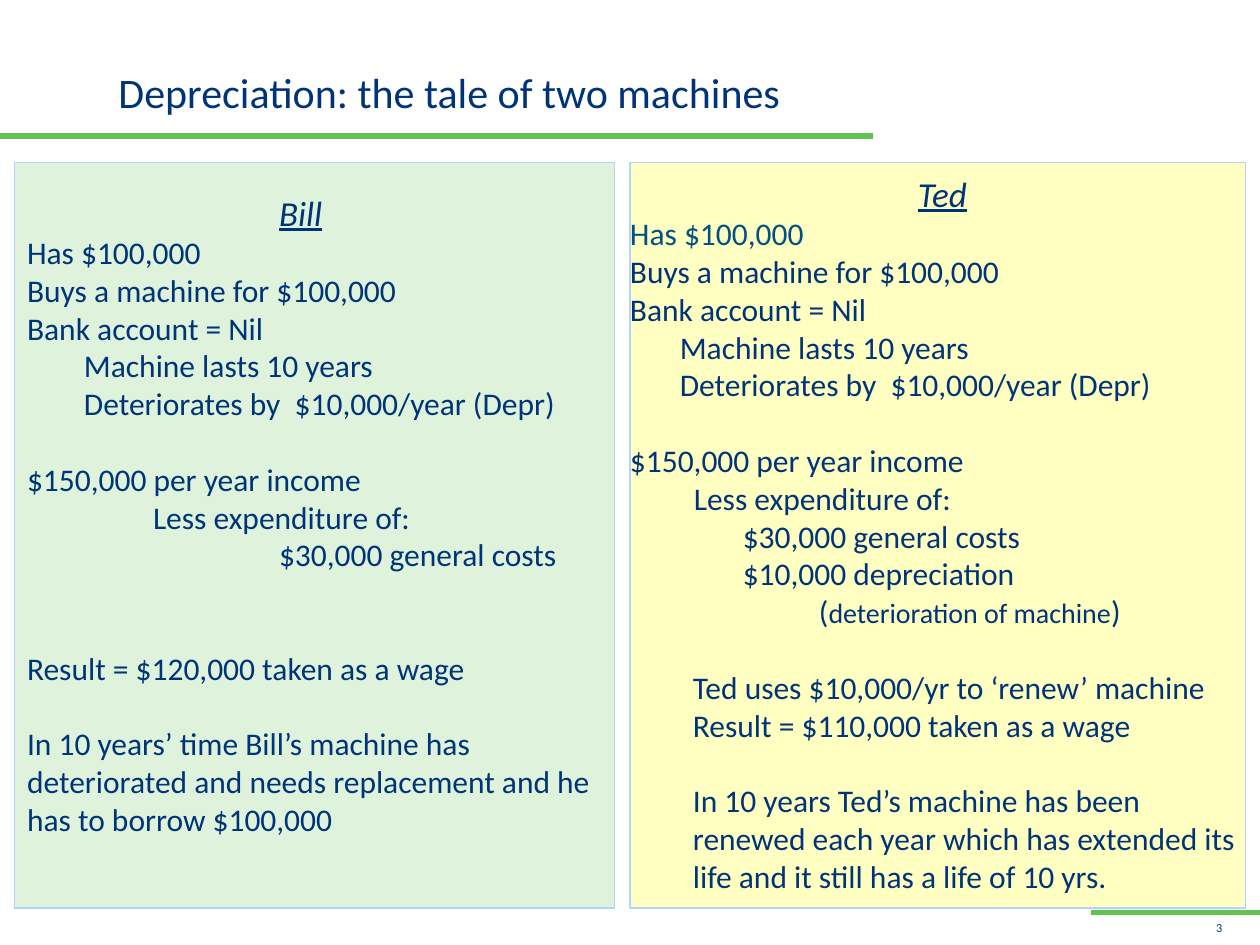
import pptx
import pptx.util
import pptx.dml.color
import pptx.enum.shapes
import pptx.enum.text
import pptx.oxml.ns
import lxml.etree

Pt = pptx.util.Pt
RGBColor = pptx.dml.color.RGBColor
Align = pptx.enum.text.PP_ALIGN
Anchor = pptx.enum.text.MSO_ANCHOR

NAVY = RGBColor(0x00, 0x34, 0x78)
TEAL = RGBColor(0x00, 0x52, 0x84)
GREEN = RGBColor(0x61, 0xC2, 0x50)
PALE_GREEN = RGBColor(0xDF, 0xF3, 0xDC)
PALE_YELLOW = RGBColor(0xFF, 0xFF, 0xC2)
PALE_BLUE = RGBColor(0xB1, 0xD3, 0xFF)
LINE = 21.6
HEADING = dict(size=20, italic=True, underline=True)

BILL = [
    dict(text="Bill", indent=144, height=24, font=HEADING),
    dict(text="Has $100,000"),
    dict(text="Buys a machine for $100,000"),
    dict(text="Bank account = Nil"),
    dict(text="Machine lasts 10 years", indent=32.5),
    dict(text="Deteriorates by  $10,000/year (Depr)", indent=32.5),
    dict(text="$150,000 per year income", gap=1),
    dict(text="Less expenditure of:", indent=72),
    dict(text="$30,000 general costs", indent=144),
    dict(text="Result = $120,000 taken as a wage", gap=2),
    dict(text="In 10 years’ time Bill’s machine has deteriorated and needs "
              "replacement and he has to borrow $100,000", gap=1),
]
TED = [
    dict(text="Ted", indent=5.5, height=24, align=Align.CENTER, font=HEADING),
    dict(text="Has $100,000", font=dict(color=TEAL)),
    dict(text="Buys a machine for $100,000"),
    dict(text="Bank account = Nil"),
    dict(text="Machine lasts 10 years", indent=28.5),
    dict(text="Deteriorates by  $10,000/year (Depr)", indent=28.5),
    dict(text="$150,000 per year income", gap=1),
    dict(text="Less expenditure of:", indent=36.5),
    dict(text="$30,000 general costs", indent=64.5),
    dict(text="$10,000 depreciation", indent=64.5),
    dict(text=["(", ("deterioration of machine", dict(size=16)), ")"], indent=108),
    dict(text="Ted uses $10,000/yr to ‘renew’ machine", indent=36, gap=1),
    dict(text="Result = $110,000 taken as a wage", indent=36),
    dict(text="In 10 years Ted’s machine has been renewed each year which has "
              "extended its life and it still has a life of 10 yrs.", indent=36, gap=1),
]


class SlideBuilder:
    def __init__(self, slide):
        self.slide = slide
        self.style = dict(name="Calibri", size=18, color=NAVY)

    def format_font(self, font, values):
        for key, value in {**self.style, **values}.items():
            if key == "color":
                font.color.rgb = value
            else:
                setattr(font, key, Pt(value) if key == "size" else value)

    def fill_frame(self, frame, lines, insets, anchor):
        margins = zip(("left", "top", "right", "bottom"), insets)
        values = {f"margin_{side}": Pt(inset) for side, inset in margins}
        values.update(word_wrap=True, vertical_anchor=anchor)
        for key, value in values.items():
            setattr(frame, key, value)
        for index, line in enumerate(lines):
            paragraph = frame.paragraphs[0] if index == 0 else frame.add_paragraph()
            settings = dict(
                alignment=line.get("align", Align.LEFT),
                line_spacing=Pt(line.get("height", LINE)),
                space_before=Pt(line.get("gap", 0) * LINE),
            )
            for key, value in settings.items():
                setattr(paragraph, key, value)
            properties = paragraph._p.get_or_add_pPr()
            properties.set("marL", str(Pt(line.get("indent", 0))))
            properties.set("indent", "0")
            pieces = line["text"] if isinstance(line["text"], list) else [line["text"]]
            for piece in pieces:
                text, extra = piece if isinstance(piece, tuple) else (piece, {})
                run = paragraph.add_run()
                run.text = text
                self.format_font(run.font, {**line.get("font", {}), **extra})

    def add_text(self, box, line):
        shape = self.slide.shapes.add_textbox(*map(Pt, box))
        self.fill_frame(shape.text_frame, [line], (0, 0, 0, 0), Anchor.BOTTOM)

    def add_panel(self, box, color, lines, insets):
        shape = self.slide.shapes.add_shape(
            pptx.enum.shapes.MSO_SHAPE.RECTANGLE, *map(Pt, box))
        shape.shadow.inherit = False
        shape.fill.solid()
        shape.fill.fore_color.rgb = color
        shape.line.color.rgb = PALE_BLUE
        shape.line.width = Pt(0.75)
        self.fill_frame(shape.text_frame, lines, insets, Anchor.TOP)

    def add_rule(self, left, right, top):
        connector = self.slide.shapes.add_connector(
            pptx.enum.shapes.MSO_CONNECTOR.STRAIGHT, *map(Pt, (left, top, right, top)))
        connector.line.color.rgb = GREEN
        connector.line.width = Pt(3)
        lxml.etree.SubElement(
            connector._element.spPr, pptx.oxml.ns.qn("a:effectLst"))


def main():
    presentation = pptx.Presentation()
    presentation.slide_width = Pt(720)
    presentation.slide_height = Pt(540)
    builder = SlideBuilder(presentation.slides.add_slide(presentation.slide_layouts[6]))
    builder.add_rule(0, 499, 77.8)
    builder.add_rule(623.5, 720, 521.3)
    builder.add_text((67.7, 18.7, 433.4, 48.2), dict(
        text="Depreciation: the tale of two machines", height=24, font=dict(size=24)))
    builder.add_text((670.3, 519.8, 28.1, 14.4), dict(
        text="3", height=8.5, align=Align.RIGHT, font=dict(size=7)))
    builder.add_panel((8.4, 92.9, 343, 426), PALE_GREEN, BILL, (7.2, 16.3, 7.2, 3.6))
    builder.add_panel((360, 92.9, 351.6, 426), PALE_YELLOW, TED, (0, 5.5, 0, 0))
    presentation.save("out.pptx")


if __name__ == "__main__":
    main()
